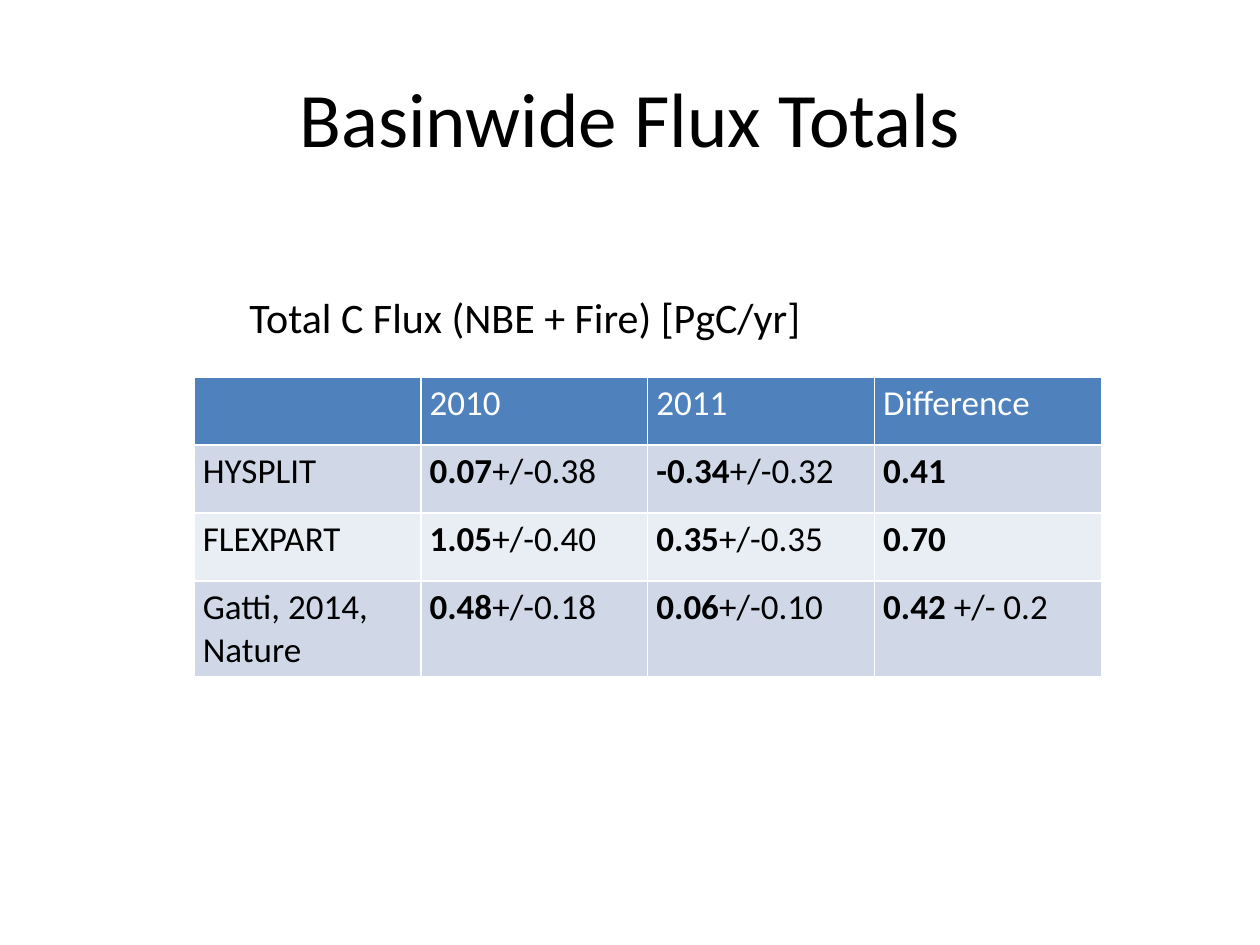
from pptx import Presentation
from pptx.dml.color import RGBColor
from pptx.enum import text
from pptx.util import Inches, Pt

# Content: each cell is (bold part, plain part)
TITLE = "Basinwide Flux Totals"
CAPTION = "Total C Flux (NBE + Fire) [PgC/yr]"
ROWS = [
    [("", ""), ("", "2010"), ("", "2011"), ("", "Difference")],
    [("", "HYSPLIT"), ("0.07", "+/-0.38"), ("-0.34", "+/-0.32"), ("0.41", "")],
    [("", "FLEXPART"), ("1.05", "+/-0.40"), ("0.35", "+/-0.35"), ("0.70", "")],
    [("", "Gatti, 2014, Nature"), ("0.48", "+/-0.18"), ("0.06", "+/-0.10"),
     ("0.42", " +/- 0.2")],
]


class Theme:
    font = "Calibri"
    ink, head_ink = "000000", "FFFFFF"
    head, bands = "4F81BD", ("D0D8E8", "E9EDF4")
    title, caption, cell = 44, 24, 20


def style(run, size, color=Theme.ink, bold=False):
    run.font.name = Theme.font
    run.font.size = Pt(size)
    run.font.bold = bold
    run.font.color.rgb = RGBColor.from_string(color)


def inset(box):
    box.margin_left = box.margin_right = Inches(0.07)
    box.margin_top = box.margin_bottom = Inches(0.04)


def fill_cell(cell, parts, row):
    inset(cell)
    cell.fill.solid()
    back = Theme.bands[(row - 1) % 2] if row else Theme.head
    cell.fill.fore_color.rgb = RGBColor.from_string(back)
    for part, bold in zip(parts, (True, False)):
        if part:
            run = cell.text_frame.paragraphs[0].add_run()
            run.text = part
            style(run, Theme.cell, Theme.ink if row else Theme.head_ink, bold)


def main():
    prs = Presentation()
    prs.slide_width, prs.slide_height = Inches(10), Inches(7.5)
    slide = prs.slides.add_slide(prs.slide_layouts[5])

    # Title
    title = slide.shapes.title
    title.left, title.top = Inches(0.5), Inches(0.3)
    title.width, title.height = Inches(9), Inches(1.25)
    frame = title.text_frame
    frame.text = TITLE
    frame.vertical_anchor = text.MSO_ANCHOR.MIDDLE
    frame.paragraphs[0].alignment = text.PP_ALIGN.CENTER
    style(frame.paragraphs[0].runs[0], Theme.title)

    # Flux table
    col, row = Inches(1.8), Inches(0.54)
    count, wide = len(ROWS), len(ROWS[0])
    table = slide.shapes.add_table(count, wide, Inches(1.54), Inches(2.99),
                                   col * wide, row * count).table
    for r, cells in enumerate(ROWS):
        for c, parts in enumerate(cells):
            fill_cell(table.cell(r, c), parts, r)

    # Table caption
    box = slide.shapes.add_textbox(Inches(1.91), Inches(2.27),
                                   Inches(4.56), Inches(0.47))
    frame = box.text_frame
    inset(frame)
    frame.word_wrap = False
    frame.auto_size = text.MSO_AUTO_SIZE.SHAPE_TO_FIT_TEXT
    frame.text = CAPTION
    style(frame.paragraphs[0].runs[0], Theme.caption)

    prs.save("out.pptx")


if __name__ == "__main__":
    main()
